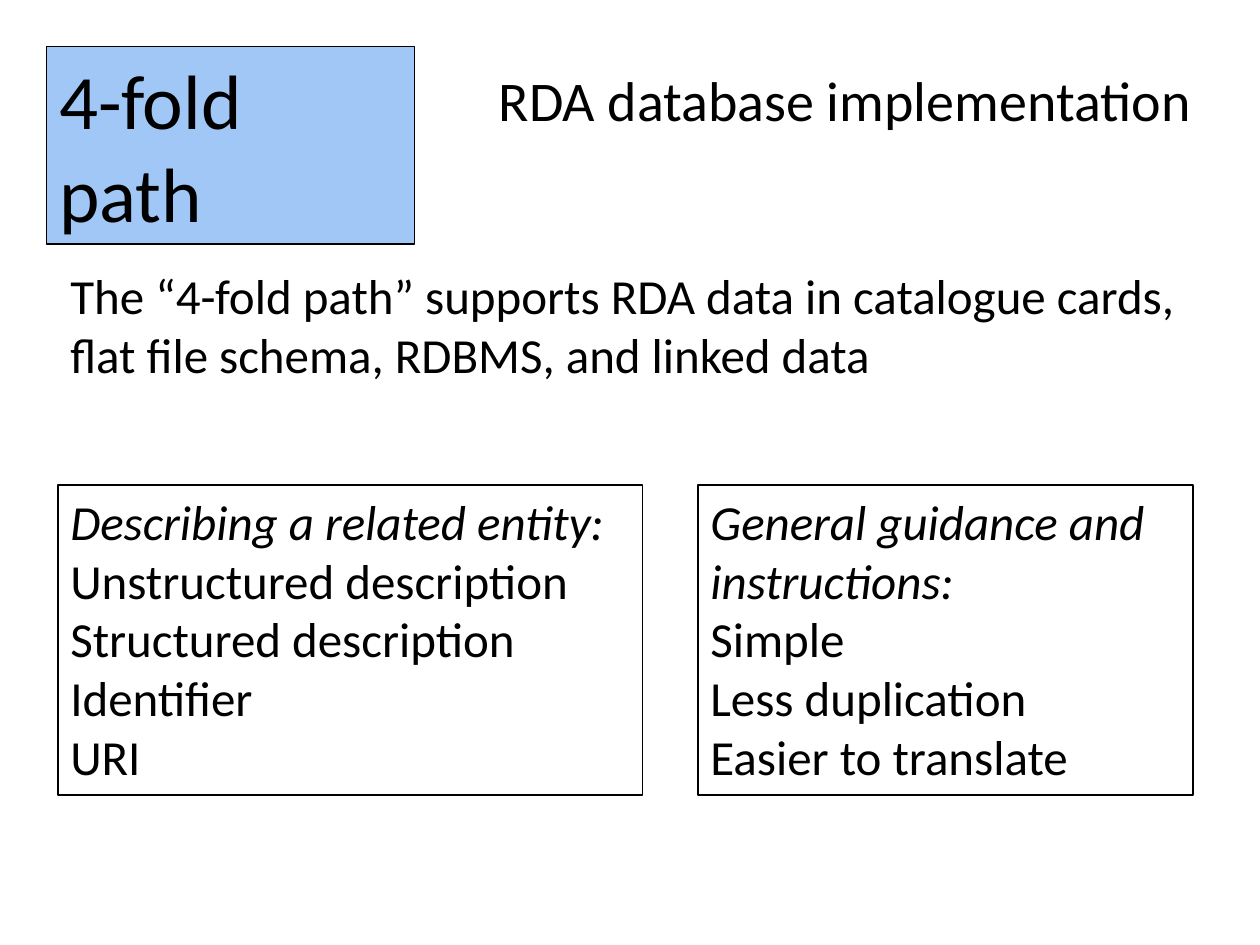
from dataclasses import dataclass

from pptx import Presentation
from pptx.dml.color import RGBColor
from pptx.enum.text import MSO_ANCHOR, MSO_AUTO_SIZE, PP_ALIGN
from pptx.util import Inches, Pt


@dataclass(frozen=True)
class Theme:
    font: str = "Calibri"
    ink: RGBColor = RGBColor(0x00, 0x00, 0x00)
    title_fill: RGBColor = RGBColor(0xA1, 0xC7, 0xF6)
    title_size: int = 44
    subtitle_size: int = 32
    body_size: int = 28
    line_width: float = 0.75


THEME = Theme()

# Content columns and rows, in inches
LEFT, RIGHT, GUTTER = 0.46, 9.47, 0.44
LIST_WIDTH = 4.64
STATEMENT_TOP, LIST_TOP, LIST_HEIGHT = 2.06, 3.85, 2.46


def place(shape, left, top, width, height):
    shape.left, shape.top = Inches(left), Inches(top)
    shape.width, shape.height = Inches(width), Inches(height)


def write(shape, lines, size, wrap=True, italic_first=False):
    """Fill a shape with left-aligned paragraphs, one for each line."""
    frame = shape.text_frame
    frame.text = "\n".join(lines)
    frame.word_wrap = wrap
    frame.auto_size = MSO_AUTO_SIZE.SHAPE_TO_FIT_TEXT
    frame.vertical_anchor = MSO_ANCHOR.TOP
    for index, paragraph in enumerate(frame.paragraphs):
        paragraph.alignment = PP_ALIGN.LEFT
        paragraph.font.name = THEME.font
        paragraph.font.size = Pt(size)
        paragraph.font.color.rgb = THEME.ink
        paragraph.font.italic = italic_first and index == 0


def outline(shape):
    shape.line.color.rgb = THEME.ink
    shape.line.width = Pt(THEME.line_width)


def format_title(slide, text, box):
    title = slide.shapes.title
    place(title, *box)
    title.fill.solid()
    title.fill.fore_color.rgb = THEME.title_fill
    outline(title)
    write(title, [text], THEME.title_size, wrap=False)


def add_text(slide, lines, box, size, **options):
    shape = slide.shapes.add_textbox(*(Inches(length) for length in box))
    write(shape, lines, size, **options)
    return shape


def add_list_box(slide, heading, items, left, width):
    """Outlined box with an italic heading above plain items."""
    box = (left, LIST_TOP, width, LIST_HEIGHT)
    outline(add_text(slide, [heading, *items], box, THEME.body_size,
                     italic_first=True))


def main():
    presentation = Presentation()
    presentation.slide_width = Inches(10)
    presentation.slide_height = Inches(7.5)
    slide = presentation.slides.add_slide(presentation.slide_layouts[5])

    # Header
    format_title(slide, "4-fold path", (0.37, 0.37, 2.92, 0.84))
    add_text(slide, ["RDA database implementation"],
             (3.86, 0.47, 5.76, 0.64), THEME.subtitle_size, wrap=False)

    # Main statement
    add_text(slide, ["The “4-fold path” supports RDA data in catalogue cards, "
                     "flat file schema, RDBMS, and linked data"],
             (LEFT, STATEMENT_TOP, RIGHT - LEFT, 1.04), THEME.body_size)

    # Two lists side by side
    add_list_box(slide, "Describing a related entity:",
                 ["Unstructured description", "Structured description",
                  "Identifier", "URI"], LEFT, LIST_WIDTH)
    second_left = LEFT + LIST_WIDTH + GUTTER
    add_list_box(slide, "General guidance and instructions:",
                 ["Simple", "Less duplication", "Easier to translate"],
                 second_left, RIGHT - second_left)

    presentation.save("out.pptx")


if __name__ == "__main__":
    main()
